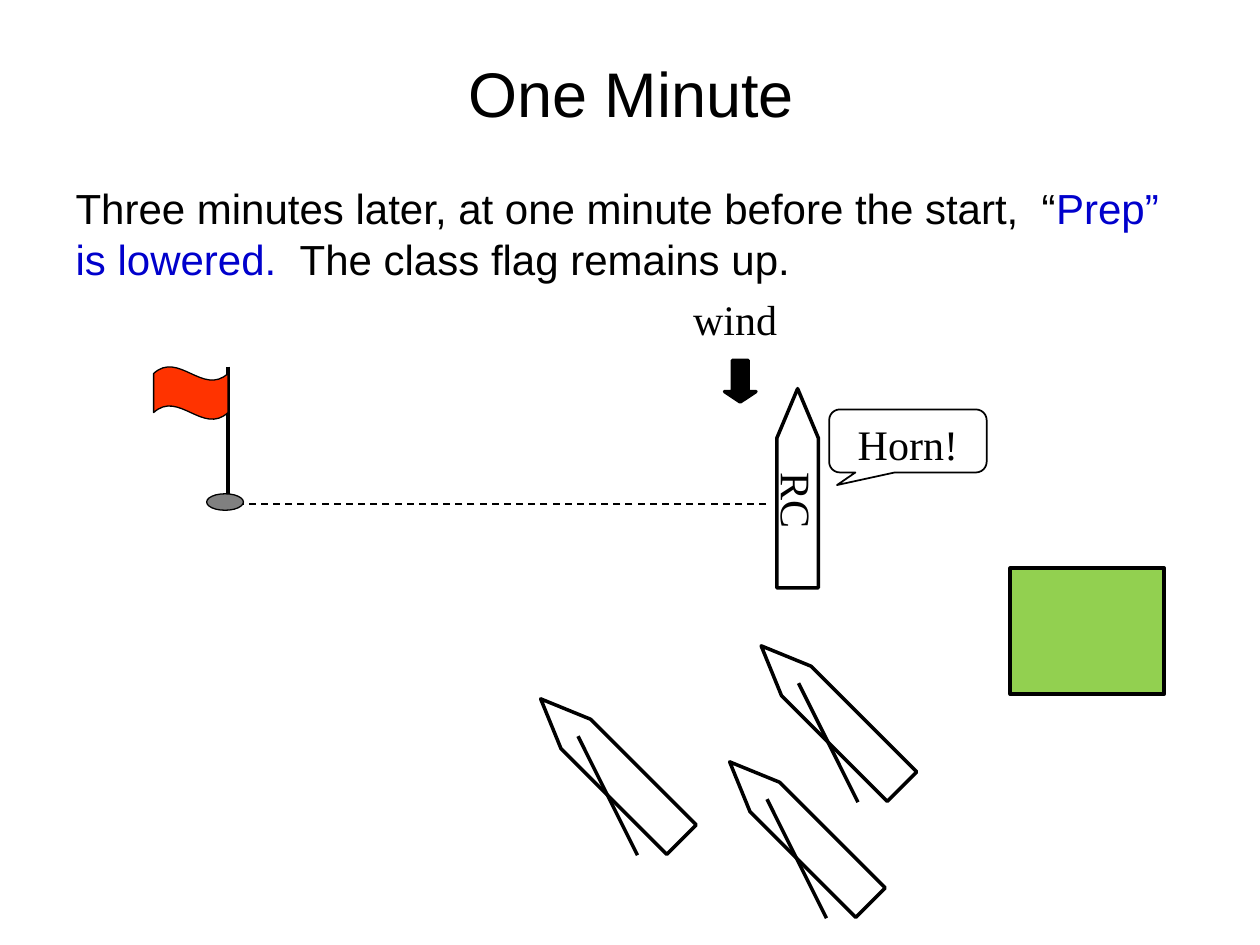
from lxml import etree
from pptx import Presentation
from pptx.dml.color import RGBColor
from pptx.enum import dml, shapes, text
from pptx.oxml.ns import qn
from pptx.util import Pt

COLORS = {"black": "000000", "blue": "0000CC", "buoy": "808080",
          "red": "FF3300", "green": "92D050"}
SHAPE = shapes.MSO_SHAPE
CENTER = text.PP_ALIGN.CENTER


def add_figure(parent, kind, box, fill=None, width=2, adjustments=(), rotation=None):
    """Add an outlined preset shape; a rotated one is also flipped vertically."""
    figure = parent.shapes.add_shape(kind, *map(Pt, box))
    figure.shadow.inherit = False
    if fill:
        figure.fill.solid()
        figure.fill.fore_color.rgb = RGBColor.from_string(COLORS[fill])
    else:
        figure.fill.background()
    figure.line.color.rgb = RGBColor.from_string(COLORS["black"])
    figure.line.width = Pt(width)
    for index, value in enumerate(adjustments):
        figure.adjustments[index] = value
    if rotation is not None:
        figure.rotation = rotation
        figure.element.spPr.find(qn("a:xfrm")).set("flipV", "1")
    return figure


def add_line(parent, ends, width):
    line = parent.shapes.add_connector(shapes.MSO_CONNECTOR.STRAIGHT, *map(Pt, ends))
    line.line.color.rgb = RGBColor.from_string(COLORS["black"])
    line.line.width = Pt(width)
    etree.SubElement(line.element.spPr, qn("a:effectLst"))
    return line


prs = Presentation()
prs.slide_width, prs.slide_height = Pt(720), Pt(540)
slide = prs.slides.add_slide(prs.slide_layouts[1])

# Title and explanation
title, body = slide.placeholders
title.left, title.top, title.width, title.height = map(Pt, (36.7, 22.3, 648, 60.5))
body.left, body.top, body.width, body.height = map(Pt, (36, 100.8, 648, 174.2))
title.text_frame.vertical_anchor = text.MSO_ANCHOR.MIDDLE
for placeholder in (title, body):
    placeholder.text_frame.auto_size = text.MSO_AUTO_SIZE.NONE

explanation = body.text_frame.paragraphs[0]
explanation.space_before = Pt(4.8)
properties = explanation._p.get_or_add_pPr()
properties.set("marL", "0")
properties.set("indent", "0")
etree.SubElement(properties, qn("a:buNone"))

# Starting line and boats
start_line = add_line(slide, (437.8, 288, 131.8, 288), 1)
start_line.line.dash_style = dml.MSO_LINE.DASH

committee_boat = add_figure(slide, SHAPE.PENTAGON, (398.9, 267.1, 113.8, 23.8),
                            adjustments=[1.19], rotation=270)
committee_boat.text_frame.vertical_anchor = text.MSO_ANCHOR.MIDDLE
committee_boat.text_frame.word_wrap = False

horn = add_figure(slide, SHAPE.ROUNDED_RECTANGULAR_CALLOUT, (473.8, 234, 90, 36),
                  width=1, adjustments=[-0.45, 0.7, 0.17])
horn.text_frame.vertical_anchor = text.MSO_ANCHOR.TOP
horn.text_frame.word_wrap = True

for left, top in ((400.3, 463.7), (418.3, 397.4), (292.3, 427.7)):
    boat = slide.shapes.add_group_shape()
    add_figure(boat, SHAPE.PENTAGON, (left, top, 113.8, 23.8),
               adjustments=[1.19], rotation=225)
    add_line(boat, (left + 38, top - 7, left + 72, top + 61), 2)

# Buoy with the class flag
mark = slide.shapes.add_group_shape()
add_line(mark, (130.3, 209.5, 130.3, 282.2), 2.25)
add_figure(mark, SHAPE.OVAL, (118.1, 282.2, 21, 9.4), "buoy", 0.75)
add_figure(mark, SHAPE.WAVE, (87.8, 209.5, 42.5, 30.2), "red", 0.75, [0.13, 0])

# Wind direction
wind = slide.shapes.add_group_shape()
add_figure(wind, SHAPE.DOWN_ARROW, (414, 205.9, 18, 23.8), "black", 2, [0.5, 0.33])
wind_label = wind.shapes.add_textbox(*map(Pt, (372.2, 164.2, 95.8, 36)))
wind_label.text_frame.word_wrap = True
wind_label.text_frame.auto_size = text.MSO_AUTO_SIZE.SHAPE_TO_FIT_TEXT
wind_label.text_frame.paragraphs[0].space_before = Pt(12)

# Signal flag
add_figure(slide, SHAPE.RECTANGLE, (577.4, 324.7, 87.8, 72), "green", 2.25)

# Wording
SERIF = "Times New Roman"
for holder, alignment, font, size, runs in (
    (title, CENTER, "Arial", 36, [("One Minute", "black")]),
    (body, text.PP_ALIGN.LEFT, "Arial", 24, [
        ("Three minutes later, at one minute before the start,  “", "black"),
        ("Prep” is lowered.  ", "blue"),
        ("The class flag remains up.", "black")]),
    (committee_boat, CENTER, SERIF, 24, [("RC", "black")]),
    (horn, CENTER, SERIF, 24, [("Horn!", "black")]),
    (wind_label, CENTER, SERIF, 24, [("wind", "black")]),
):
    paragraph = holder.text_frame.paragraphs[0]
    paragraph.alignment = alignment
    for words, color in runs:
        run = paragraph.add_run()
        run.text = words
        run.font.name = font
        run.font.size = Pt(size)
        run.font.color.rgb = RGBColor.from_string(COLORS[color])

prs.save("out.pptx")
